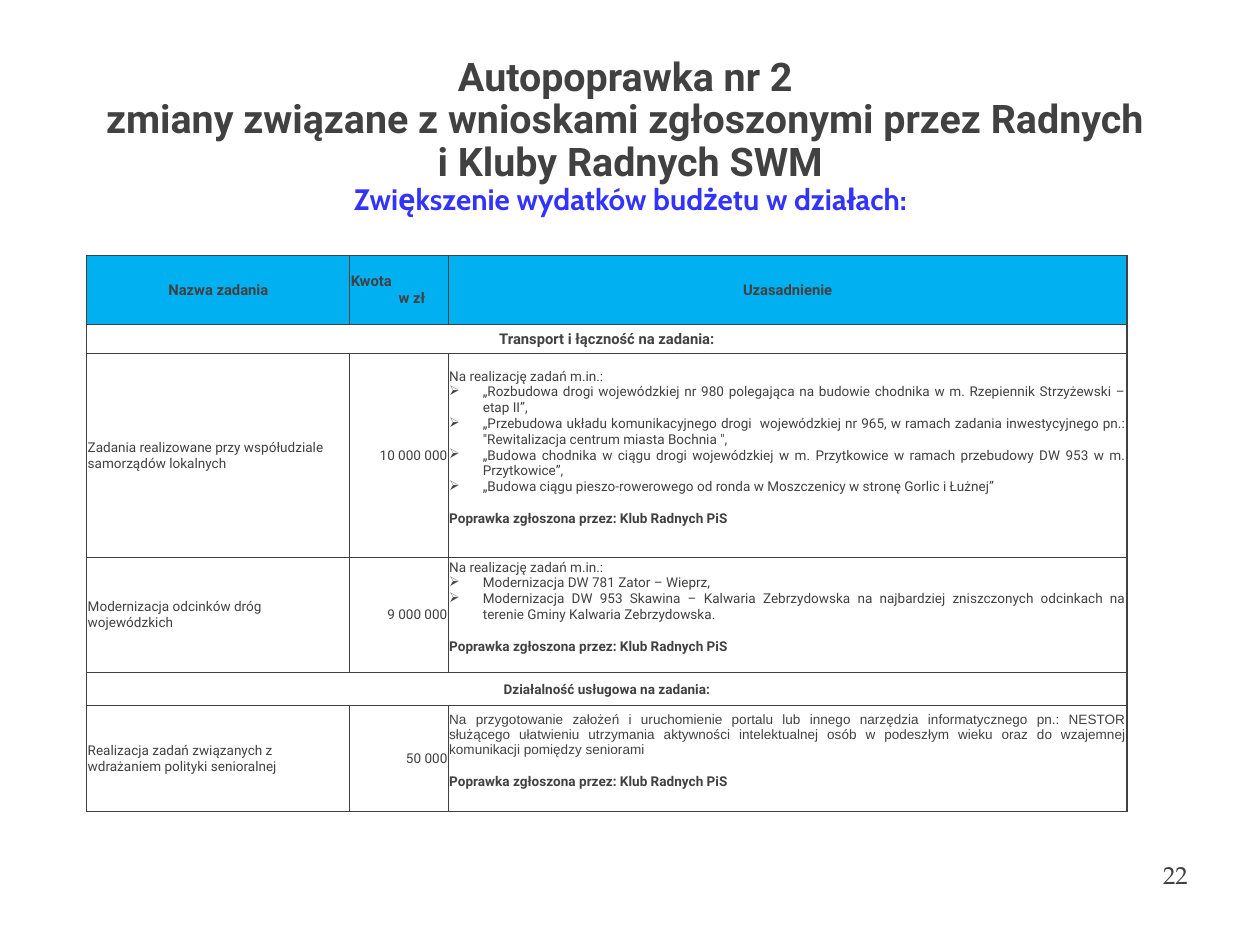
from copy import deepcopy
from dataclasses import dataclass

from lxml.etree import SubElement
from pptx import Presentation
from pptx.dml.color import RGBColor
from pptx.enum.text import MSO_ANCHOR as Anchor, MSO_AUTO_SIZE as AutoSize, PP_ALIGN as Align
from pptx.oxml.ns import qn
from pptx.util import Pt

EMU_PER_PX = 9144


@dataclass(frozen=True)
class Theme:
    ink: str = "414141"
    accent: str = "3333FF"
    header_fill: str = "00B0F0"
    body_font: str = "Roboto"
    accent_font: str = "Cabin"
    plain_font: str = "Arial"
    number_font: str = "TeX Gyre Pagella"
    title_size: int = 32
    subtitle_size: int = 24
    number_size: int = 20
    header_size: int = 12
    body_size: int = 11
    request_gap: int = 13
    border: int = 1


THEME = Theme()

COLUMNS = (297, 111, 766)
BULLET_INDENT = 38
UNIT_INDENT = 54
REASON_BOTTOM = 18

HEADERS = ("Nazwa zadania", "Kwota", "Uzasadnienie")
UNIT = "w zł"
REQUEST = "Poprawka zgłoszona przez: Klub Radnych PiS"
LEAD = "Na realizację zadań m.in.:"


@dataclass(frozen=True)
class Section:
    heading: str
    height: int
    size: int


@dataclass(frozen=True)
class Task:
    name: str
    amount: str
    height: int
    lead: str = LEAD
    lead_font: str = THEME.body_font
    items: tuple = ()


HEADER_HEIGHT = 78
ROWS = (
    Section("Transport i łączność na zadania:", 33, THEME.header_size),
    Task("Zadania realizowane przy współudziale samorządów lokalnych", "10 000 000", 230, items=(
        "„Rozbudowa drogi wojewódzkiej nr 980 polegająca na budowie chodnika "
        "w m. Rzepiennik Strzyżewski – etap II”,",
        "„Przebudowa układu komunikacyjnego drogi  wojewódzkiej nr 965, w ramach zadania "
        "inwestycyjnego pn.: \"Rewitalizacja centrum miasta Bochnia \",",
        "„Budowa chodnika w ciągu drogi wojewódzkiej w m. Przytkowice "
        "w ramach przebudowy DW 953 w m. Przytkowice”,",
        "„Budowa ciągu pieszo-rowerowego od ronda w Moszczenicy w stronę Gorlic i Łużnej”",
    )),
    Task("Modernizacja odcinków dróg wojewódzkich", "9 000 000", 130, items=(
        "Modernizacja DW 781 Zator – Wieprz,",
        "Modernizacja DW 953 Skawina – Kalwaria Zebrzydowska na najbardziej zniszczonych "
        "odcinkach na terenie Gminy Kalwaria Zebrzydowska.",
    )),
    Section("Działalność usługowa na zadania:", 38, THEME.body_size),
    Task("Realizacja zadań związanych z wdrażaniem polityki senioralnej", "50 000", 119,
         lead="Na przygotowanie założeń i uruchomienie portalu lub innego narzędzia informatycznego "
              "pn.: NESTOR służącego ułatwieniu utrzymania aktywności intelektualnej osób "
              "w podeszłym wieku oraz do wzajemnej komunikacji pomiędzy seniorami",
         lead_font=THEME.plain_font),
)


def px(length):
    return length * EMU_PER_PX


def write(paragraph, text, size=THEME.body_size, font=THEME.body_font, color=THEME.ink,
          bold=False, align=None, before=None, indent=0, bullet=None):
    """Append text to a paragraph; each newline becomes a line break."""
    if indent:
        properties = paragraph._p.get_or_add_pPr()
        properties.set("marL", str(px(indent)))
        if bullet:
            properties.set("indent", str(-px(indent)))
            SubElement(properties, qn("a:buChar")).set("char", bullet)
    if align is not None:
        paragraph.alignment = align
    if before is not None:
        paragraph.space_before = Pt(before)
    for number, line in enumerate(text.split("\n")):
        if number:
            paragraph.add_line_break()
            # The break takes the run's size so that it does not stretch its line.
            paragraph._p.findall(qn("a:br"))[-1].append(deepcopy(run.font._element))
        run = paragraph.add_run()
        run.text = line
        run.font.size, run.font.name, run.font.bold = Pt(size), font, bold
        run.font.color.rgb = RGBColor.from_string(color)


def set_margins(frame, margin):
    frame.margin_left = frame.margin_right = frame.margin_top = frame.margin_bottom = px(margin)


def place_title(slide, left, top, width, height):
    title = slide.shapes.title
    title.left, title.top, title.width, title.height = map(px, (left, top, width, height))
    frame = title.text_frame
    frame.word_wrap, frame.auto_size = True, AutoSize.NONE
    frame.vertical_anchor = Anchor.MIDDLE
    set_margins(frame, 0)
    heading = frame.paragraphs[0]
    heading.line_spacing = 0.9
    write(heading, "Autopoprawka nr 2 \nzmiany związane z wnioskami zgłoszonymi przez Radnych \n"
          "i Kluby Radnych SWM\n", THEME.title_size, bold=True, align=Align.CENTER, before=0)
    write(heading, "Zwiększenie wydatków budżetu w działach:", THEME.subtitle_size,
          THEME.accent_font, THEME.accent, bold=True)


def place_page_number(slide, left, top, width, height):
    frame = slide.shapes.add_textbox(*map(px, (left, top, width, height))).text_frame
    frame.word_wrap = True
    frame.vertical_anchor = Anchor.MIDDLE
    set_margins(frame, 6)
    write(frame.paragraphs[0], "22", THEME.number_size, THEME.number_font, align=Align.CENTER)


def style_cell(cell, fill=None):
    cell.vertical_anchor = Anchor.MIDDLE
    cell.margin_left = cell.margin_right = cell.margin_top = px(1)
    cell.margin_bottom = 0
    properties = cell._tc.get_or_add_tcPr()
    for side in ("lnL", "lnR", "lnT", "lnB"):
        border = SubElement(properties, qn(f"a:{side}"), w=str(Pt(THEME.border)))
        SubElement(SubElement(border, qn("a:solidFill")), qn("a:srgbClr"), val=THEME.ink)
    if fill:
        cell.fill.solid()
        cell.fill.fore_color.rgb = RGBColor.from_string(fill)
    else:
        cell.fill.background()


def fill_header(cells):
    for cell, label in zip(cells, HEADERS):
        align = Align.LEFT if label == "Kwota" else Align.CENTER
        write(cell.text_frame.paragraphs[0], label, THEME.header_size, bold=True, align=align)
    write(cells[1].text_frame.add_paragraph(), UNIT, THEME.header_size, bold=True, indent=UNIT_INDENT)


def fill_section(cells, section):
    cells[0].merge(cells[-1])
    write(cells[0].text_frame.paragraphs[0], section.heading, section.size,
          bold=True, align=Align.CENTER)


def fill_task(cells, task):
    name, amount, reason = cells
    write(name.text_frame.paragraphs[0], task.name)
    write(amount.text_frame.paragraphs[0], task.amount, align=Align.RIGHT)
    reason.margin_bottom = px(REASON_BOTTOM)
    frame = reason.text_frame
    write(frame.paragraphs[0], task.lead, font=task.lead_font, align=Align.JUSTIFY)
    for item in task.items:
        write(frame.add_paragraph(), item, align=Align.JUSTIFY, indent=BULLET_INDENT, bullet="➢")
    write(frame.add_paragraph(), REQUEST, bold=True, before=THEME.request_gap)


def place_budget_table(slide, left, top):
    heights = [HEADER_HEIGHT] + [row.height for row in ROWS]
    box = map(px, (left, top, sum(COLUMNS), sum(heights)))
    table = slide.shapes.add_table(len(heights), len(COLUMNS), *box).table
    table.first_row = table.horz_banding = False
    for column, width in zip(table.columns, COLUMNS):
        column.width = px(width)
    for number, (row, height) in enumerate(zip(table.rows, heights)):
        row.height = px(height)
        cells = list(row.cells)
        for cell in cells:
            style_cell(cell, None if number else THEME.header_fill)
        if number == 0:
            fill_header(cells)
        elif isinstance(ROWS[number - 1], Section):
            fill_section(cells, ROWS[number - 1])
        else:
            fill_task(cells, ROWS[number - 1])


def main():
    deck = Presentation()
    deck.slide_width, deck.slide_height = px(1422), px(1067)
    slide = deck.slides.add_slide(deck.slide_layouts[5])
    place_page_number(slide, 1286, 965, 81, 45)
    place_title(slide, 56, 88, 1311, 133)
    place_budget_table(slide, 98, 288)
    deck.save("out.pptx")


if __name__ == "__main__":
    main()
